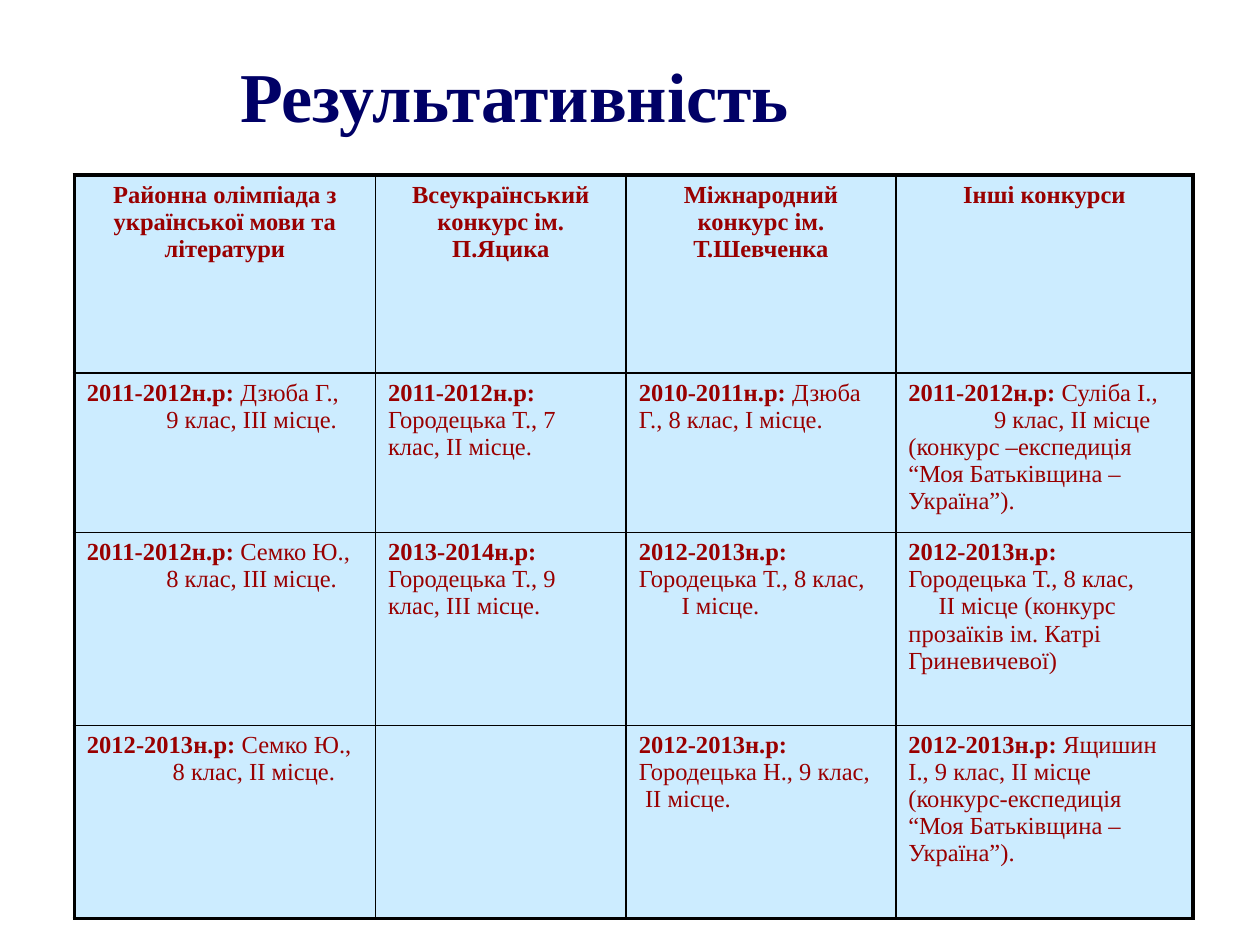
from lxml import etree
from pptx import Presentation
from pptx.dml.color import RGBColor
from pptx.enum import text
from pptx.oxml import ns
from pptx.util import Inches, Pt

COLORS = {"title": "000066", "text": "990000", "cell": "CCECFF", "border": "000000"}
FONT = "Times New Roman"


def style_font(font, size, color, bold):
    font.name, font.size, font.bold = FONT, Pt(size), bold
    font.color.rgb = RGBColor.from_string(COLORS[color])


def add_border(cell, side, width):
    """Draw one edge (L, R, T or B) of a cell; call before filling the cell."""
    line = etree.SubElement(cell._tc.get_or_add_tcPr(), ns.qn(f"a:ln{side}"), w=str(Pt(width)))
    fill = etree.SubElement(line, ns.qn("a:solidFill"))
    etree.SubElement(fill, ns.qn("a:srgbClr"), val=COLORS["border"])


deck = Presentation()
deck.slide_width, deck.slide_height = Inches(10), Inches(7.5)
page = deck.slides.add_slide(deck.slide_layouts[6])

title = page.shapes.add_textbox(Inches(0), Inches(0.3), Inches(8.17), Inches(1.25))
title.text_frame.word_wrap = True
title.text_frame.margin_top = Inches(0.12)
title.text_frame.text = "Результативність"
heading = title.text_frame.paragraphs[0]
heading.alignment = text.PP_ALIGN.CENTER
style_font(heading.runs[0].font, 40, "title", True)

# Each result: school year, text beside it, then an optional
# continuation line with its first-line indent in inches.
headers = [
    "Районна олімпіада з української мови та літератури",
    "Всеукраїнський конкурс ім. П.Яцика",
    "Міжнародний конкурс ім. Т.Шевченка",
    "Інші конкурси",
]
results = [
    [
        ("2011-2012н.р:", " Дзюба Г.,", (0.63, "9 клас, ІІІ місце.")),
        ("2011-2012н.р:", " Городецька Т., 7 клас, ІІ місце."),
        ("2010-2011н.р:", " Дзюба Г., 8 клас, І місце."),
        ("2011-2012н.р:", " Суліба І.,",
         (0.68, "9 клас, ІІ місце (конкурс –експедиція “Моя Батьківщина – Україна”).")),
    ],
    [
        ("2011-2012н.р:", " Семко Ю.,", (0.63, "8 клас, ІІІ місце.")),
        ("2013-2014н.р:", " Городецька Т., 9 клас, ІІІ місце."),
        ("2012-2013н.р:", " Городецька Т., 8 клас,", (0.34, "І місце.")),
        ("2012-2013н.р:", "", (0, "Городецька Т., 8 клас,"),
         (0.24, "ІІ місце (конкурс прозаїків ім. Катрі Гриневичевої)")),
    ],
    [
        ("2012-2013н.р:", " Семко Ю.,", (0.68, "8 клас, ІІ місце.")),
        None,
        ("2012-2013н.р:", " Городецька Н., 9 клас,", (0.05, "ІІ місце.")),
        ("2012-2013н.р:",
         " Ящишин І., 9 клас, ІІ місце (конкурс-експедиція “Моя Батьківщина – Україна”)."),
    ],
]

widths = [2.39, 1.99, 2.14, 2.36]
heights = [1.57, 1.03, 1.53, 1.53]
table = page.shapes.add_table(
    len(heights), len(widths), Inches(0.59), Inches(1.39),
    Inches(sum(widths)), Inches(sum(heights))).table
for column, width in zip(table.columns, widths):
    column.width = Inches(width)
for row, height in zip(table.rows, heights):
    row.height = Inches(height)

last_row, last_column = len(heights) - 1, len(widths) - 1
for r in range(len(heights)):
    for c in range(len(widths)):
        cell = table.cell(r, c)
        outer_edges = {"L": c == 0, "R": c == last_column, "T": r == 0, "B": r == last_row}
        for side, is_outer in outer_edges.items():
            add_border(cell, side, 2.25 if is_outer else 1)
        cell.fill.solid()
        cell.fill.fore_color.rgb = RGBColor.from_string(COLORS["cell"])

        para = cell.text_frame.paragraphs[0]
        if r == 0:
            para.text = headers[c]
            para.alignment = text.PP_ALIGN.CENTER
            style_font(para.runs[0].font, 14, "text", True)
            continue
        result = results[r - 1][c]
        if result is None:
            continue
        year, beside, *continuations = result
        para.text = year
        style_font(para.runs[0].font, 14, "text", True)
        if beside:
            span = para.add_run()
            span.text = beside
            style_font(span.font, 14, "text", False)
        for indent, line in continuations:
            para = cell.text_frame.add_paragraph()
            para.text = line
            properties = para._p.get_or_add_pPr()
            properties.set("marL", "0")
            properties.set("indent", str(Inches(indent)))
            style_font(para.runs[0].font, 14, "text", False)

deck.save("out.pptx")
